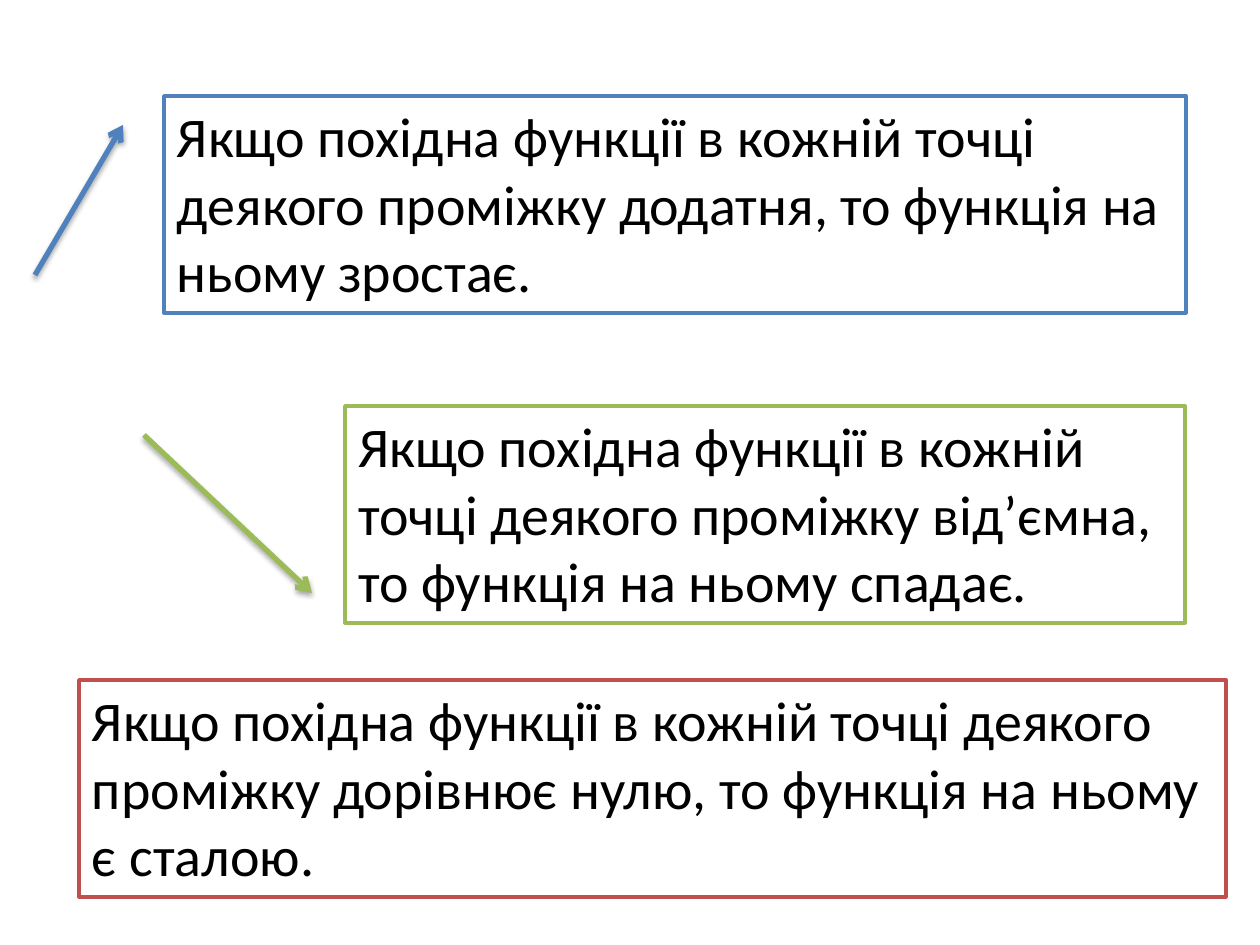
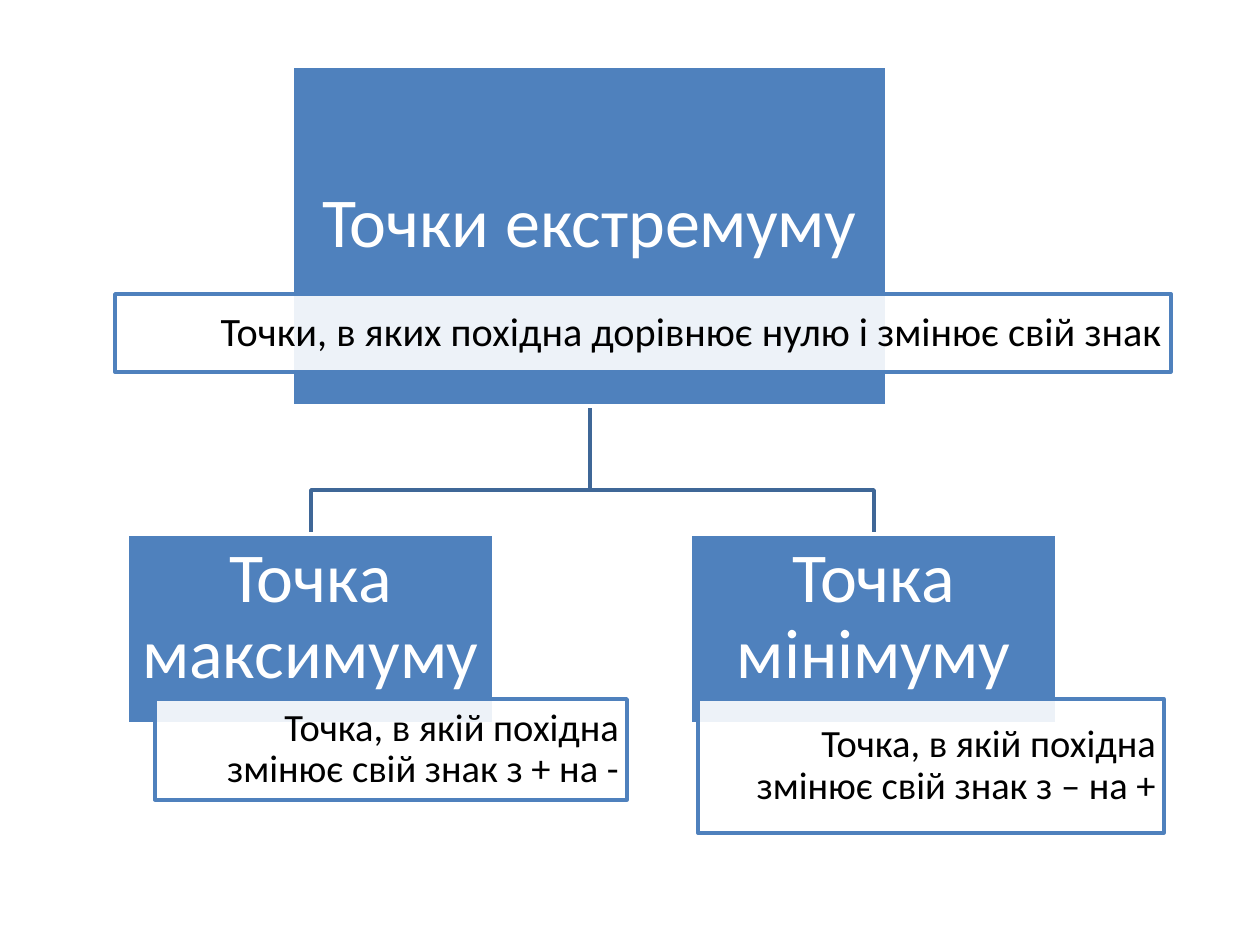
from lxml import etree
from pptx import Presentation
from pptx.dml.color import RGBColor
from pptx.enum import shapes, text
from pptx.oxml import ns
from pptx.util import Emu, Pt

PX = 914400 / 126
BLUE = RGBColor(0x4F, 0x81, 0xBD)
GREEN = RGBColor(0x9B, 0xBB, 0x59)
RED = RGBColor(0xC0, 0x50, 0x4D)
NAVY = RGBColor(0x3F, 0x67, 0x97)
WHITE = RGBColor(0xFF, 0xFF, 0xFF)
BLACK = RGBColor(0, 0, 0)
SHADOW = f"""<a:effectLst {ns.nsdecls("a")}>
<a:outerShdw blurRad="{int(Pt(3.1))}" dist="{int(Pt(1.8))}" dir="5400000" rotWithShape="0">
<a:srgbClr val="000000"><a:alpha val="35000"/></a:srgbClr>
</a:outerShdw></a:effectLst>"""


def px(*nums):
    return [Emu(round(n * PX)) for n in nums]


def box(slide, place, words, size, fill, line, ink, align, pads):
    rect = slide.shapes.add_shape(shapes.MSO_SHAPE.RECTANGLE, *px(*place))
    rect.shadow.inherit = False
    rect.fill.solid()
    rect.fill.fore_color.rgb = fill
    rect.line.color.rgb = line
    rect.line.width = Pt(2)
    frame = rect.text_frame
    frame.word_wrap = True
    frame.vertical_anchor = text.MSO_ANCHOR.MIDDLE
    (frame.margin_left, frame.margin_top,
     frame.margin_right, frame.margin_bottom) = px(*pads)
    para = frame.paragraphs[0]
    para.text = words
    para.alignment = align
    para.font.name = "Calibri"
    para.font.size = Pt(size)
    para.font.color.rgb = ink
    return rect


deck = Presentation()
deck.slide_width, deck.slide_height = px(1260, 945)
blank = deck.slide_layouts[6]

slide = deck.slides.add_slide(blank)
rules = [
    (164, 96, 1022, BLUE, "додатня, то функція на ньому зростає."),
    (345, 406, 840, GREEN, "від’ємна, то функція на ньому спадає."),
    (79, 680, 1147, RED, "дорівнює нулю, то функція на ньому є сталою."),
]
for left, top, width, hue, end in rules:
    rule = box(slide, (left, top, width, 217),
               "Якщо похідна функції в кожній точці деякого проміжку " + end,
               32, WHITE, hue, BLACK, text.PP_ALIGN.LEFT, (13, 6, 13, 6))
    rule.text_frame.vertical_anchor = text.MSO_ANCHOR.TOP
    rule.text_frame.auto_size = text.MSO_AUTO_SIZE.SHAPE_TO_FIT_TEXT

for ends, hue in [((35, 275, 123, 125), BLUE), ((144, 435, 312, 593), GREEN)]:
    arrow = slide.shapes.add_connector(shapes.MSO_CONNECTOR.STRAIGHT, *px(*ends))
    arrow.line.color.rgb = hue
    arrow.line.width = Pt(3)
    edge = arrow._element.spPr.find(ns.qn("a:ln"))
    etree.SubElement(edge, ns.qn("a:tailEnd"), type="arrow")
    arrow._element.spPr.append(etree.fromstring(SHADOW))

slide = deck.slides.add_slide(blank)
for end in (874, 311):
    pen = slide.shapes.build_freeform(590, 407, scale=PX)
    pen.add_line_segments([(590, 490), (end, 490), (end, 534)], close=False)
    branch = pen.convert_to_shape()
    branch.shadow.inherit = False
    branch.fill.background()
    branch.line.color.rgb = NAVY
    branch.line.width = Pt(2)

nodes = [
    ((292, 66, 595, 340), "Точки екстремуму",
     (115, 294, 1056, 78), "Точки, в яких похідна дорівнює нулю і змінює свій знак", 23),
    ((127, 534, 367, 190), "Точка максимуму",
     (155, 699, 472, 101), "Точка, в якій похідна змінює свій знак з + на -", 22),
    ((690, 534, 367, 190), "Точка мінімуму",
     (698, 699, 466, 134), "Точка, в якій похідна змінює свій знак з – на +", 22),
]
for place, name, spot, words, size in nodes:
    head = box(slide, place, name, 40, BLUE, WHITE, WHITE,
               text.PP_ALIGN.CENTER, (4, 4, 4, 26))
    note = box(slide, spot, words, size, WHITE, BLUE, BLACK,
               text.PP_ALIGN.RIGHT, (8, 3, 8, 3))
    for part in (head, note):
        part.text_frame.paragraphs[0].line_spacing = 0.9
    tint = note._element.spPr.find(ns.qn("a:solidFill"))[0]
    etree.SubElement(tint, ns.qn("a:alpha"), val="90000")

deck.save("out.pptx")
